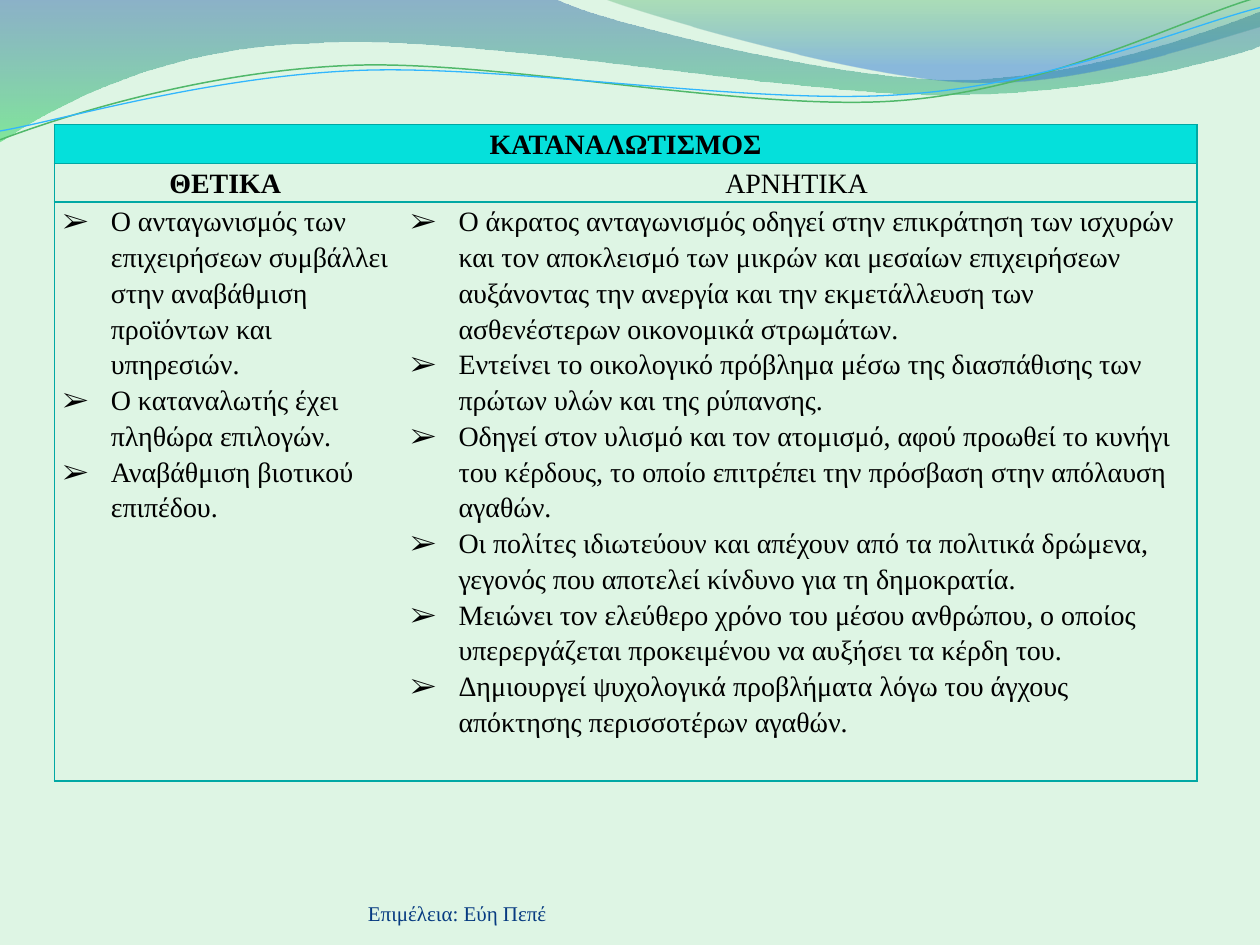
"""Builds a slide with a two-column table on consumerism under a waved header."""
from dataclasses import dataclass
from typing import Optional

from lxml import etree
from pptx import Presentation
from pptx import util as u
from pptx.dml.color import RGBColor
from pptx.enum import text
from pptx.oxml.ns import qn

Point = tuple[float, float]


@dataclass(frozen=True)
class Theme:
    background: str = "DEF5E4"
    header: str = "05E0DB"
    border: str = "01A8A4"
    ink: str = "000000"
    credit: str = "073B81"
    font: str = "Times New Roman"
    table_size: float = 16
    credit_size: float = 12
    border_width: float = 0.75
    line_spacing: float = 1.15


@dataclass(frozen=True)
class Stop:
    position: float
    color: str
    opacity: int


@dataclass(frozen=True)
class Wave:
    """A start point and segments of one point (straight) or three (Bezier)."""
    start: Point
    segments: list[tuple[Point, ...]]
    stops: tuple[Stop, ...] = ()
    line: Optional[str] = None
    width: float = 0


THEME = Theme()
WAVES = [
    Wave((0, 0), [
        ((4.4, -0.01),),
        ((4.76, 0.17), (6.64, 0.63), (7.58, 0.63)),
        ((8.53, 0.63), (9.58, 0.26), (10, 0.09)),
        ((10.01, 0.36),),
        ((9.83, 0.44), (8.7, 0.76), (7.46, 0.75)),
        ((6.22, 0.75), (3.82, 0.28), (2.57, 0.34)),
        ((1.29, 0.36), (0.46, 0.83), (-0.01, 1.13)),
    ], stops=(Stop(0, "2960A7", 45), Stop(1, "35DA5E", 55))),
    Wave((4.79, -0.01), [
        ((5.09, 0.11), (6.82, 0.62), (7.69, 0.65)),
        ((8.56, 0.69), (9.61, 0.32), (10, 0.21)),
        ((10, 0),),
    ], stops=(Stop(0, "36A752", 30), Stop(0.8, "2472D3", 45))),
    Wave((0, 1.11), [
        ((0.48, 0.93), (1.58, 0.57), (2.77, 0.52)),
        ((3.95, 0.47), (5.93, 0.89), (7.13, 0.8)),
        ((8.33, 0.71), (9.38, 0.15), (9.98, -0.02)),
    ], line="50B86A", width=0.85),
    Wave((0, 1.04), [
        ((0.47, 0.96), (1.64, 0.61), (2.83, 0.56)),
        ((4.03, 0.51), (5.97, 0.84), (7.17, 0.75)),
        ((8.36, 0.67), (9.41, 0.21), (10, 0.06)),
    ], line="31B6FD", width=0.75),
]
TITLE = "ΚΑΤΑΝΑΛΩΤΙΣΜΟΣ"
HEADINGS = ["ΘΕΤΙΚΑ ", "ΑΡΝΗΤΙΚΑ "]
POSITIVES = [
    "Ο ανταγωνισμός των επιχειρήσεων συμβάλλει στην αναβάθμιση προϊόντων και υπηρεσιών.",
    "Ο καταναλωτής έχει πληθώρα επιλογών.",
    "Αναβάθμιση βιοτικού επιπέδου.",
]
NEGATIVES = [
    "Ο άκρατος ανταγωνισμός οδηγεί στην επικράτηση των ισχυρών και τον αποκλεισμό των μικρών "
    "και μεσαίων επιχειρήσεων αυξάνοντας την ανεργία και την εκμετάλλευση των ασθενέστερων "
    "οικονομικά στρωμάτων.",
    "Εντείνει το οικολογικό πρόβλημα μέσω της διασπάθισης των πρώτων υλών και της ρύπανσης.",
    "Οδηγεί στον υλισμό και τον ατομισμό, αφού προωθεί το κυνήγι του κέρδους, το οποίο "
    "επιτρέπει την πρόσβαση στην απόλαυση αγαθών.",
    "Οι πολίτες ιδιωτεύουν και απέχουν από τα πολιτικά δρώμενα, γεγονός που αποτελεί κίνδυνο "
    "για τη δημοκρατία.",
    "Μειώνει τον ελεύθερο χρόνο του μέσου ανθρώπου, ο οποίος υπερεργάζεται προκειμένου να "
    "αυξήσει τα κέρδη του.",
    "Δημιουργεί ψυχολογικά προβλήματα λόγω του άγχους απόκτησης περισσοτέρων αγαθών.",
]


def rgb(value: str) -> RGBColor:
    return RGBColor.from_string(value)


def to_emu(point: Point) -> tuple[int, int]:
    return u.Inches(point[0]), u.Inches(point[1])


def bend(shape, wave: Wave) -> None:
    """Turn the straight steps of three-point segments into Bezier curves."""
    steps = list(shape._element.spPr.iter(qn("a:lnTo")))
    for step, segment in zip(steps, wave.segments):
        if len(segment) == 3:
            curve = etree.Element(qn("a:cubicBezTo"))
            for x, y in map(to_emu, segment):
                etree.SubElement(curve, qn("a:pt"), x=str(x - shape.left), y=str(y - shape.top))
            step.getparent().replace(step, curve)


def draw_wave(page, wave: Wave) -> None:
    builder = page.shapes.build_freeform(*to_emu(wave.start))
    builder.add_line_segments([to_emu(segment[-1]) for segment in wave.segments],
                              close=bool(wave.stops))
    shape = builder.convert_to_shape()
    bend(shape, wave)
    shape.shadow.inherit = False
    if wave.line:
        shape.fill.background()
        shape.line.color.rgb = rgb(wave.line)
        shape.line.width = u.Pt(wave.width)
        return
    shape.line.fill.background()
    shape.fill.gradient()
    shape.fill.gradient_angle = 270
    for target, stop in zip(shape.fill.gradient_stops, wave.stops):
        target.position = stop.position
        target.color.rgb = rgb(stop.color)
    for color, stop in zip(shape._element.spPr.iter(qn("a:srgbClr")), wave.stops):
        etree.SubElement(color, qn("a:alpha"), val=str(stop.opacity * 1000))


def style_spans(paragraph, size: float, color: str, bold: bool = False) -> None:
    for span in paragraph.runs:
        font = span.font
        font.name, font.size, font.bold = THEME.font, u.Pt(size), bold
        font.color.rgb = rgb(color)


def add_bullet(paragraph) -> None:
    properties = paragraph._p.get_or_add_pPr()
    properties.set("marL", str(u.Inches(0.38)))
    properties.set("indent", str(u.Inches(-0.38)))
    etree.SubElement(properties, qn("a:buFont"), typeface=THEME.font)
    etree.SubElement(properties, qn("a:buChar"), char="➢")


def set_borders(cell, visible: str) -> None:
    properties = cell._tc.get_or_add_tcPr()
    for index, side in enumerate("LRTB"):
        line = etree.Element(qn(f"a:ln{side}"), w=str(u.Pt(THEME.border_width)))
        if side in visible:
            fill = etree.SubElement(line, qn("a:solidFill"))
            etree.SubElement(fill, qn("a:srgbClr"), val=THEME.border)
        else:
            etree.SubElement(line, qn("a:noFill"))
        properties.insert(index, line)


def fill_cell(cell, lines: list[str], borders: str, bold: bool = False,
              bullets: bool = False, color: Optional[str] = None) -> None:
    cell.margin_left = cell.margin_right = u.Inches(0.07)
    cell.margin_top = cell.margin_bottom = 0
    if color:
        cell.fill.solid()
        cell.fill.fore_color.rgb = rgb(color)
    else:
        cell.fill.background()
    set_borders(cell, borders)
    cell.text = "\n".join(lines)
    for paragraph in cell.text_frame.paragraphs:
        paragraph.line_spacing = THEME.line_spacing
        style_spans(paragraph, THEME.table_size, THEME.ink, bold)
        if bullets:
            add_bullet(paragraph)
        else:
            paragraph.alignment = text.PP_ALIGN.CENTER


def draw_table(page) -> None:
    widths, heights = (2.76, 6.31), (0.3, 0.3, 4.42)
    table = page.shapes.add_table(3, 2, u.Inches(0.43), u.Inches(0.99),
                                  u.Inches(sum(widths)), u.Inches(sum(heights))).table
    table.first_row = table.horz_banding = False
    for column, width in zip(table.columns, widths):
        column.width = u.Inches(width)
    for row, height in zip(table.rows, heights):
        row.height = u.Inches(height)
    table.cell(0, 0).merge(table.cell(0, 1))
    fill_cell(table.cell(0, 0), [TITLE], "LRTB", bold=True, color=THEME.header)
    for column, (side, items) in enumerate((("L", POSITIVES), ("R", NEGATIVES))):
        fill_cell(table.cell(1, column), [HEADINGS[column]], side + "TB", bold=column == 0)
        fill_cell(table.cell(2, column), items, side + "TB", bullets=True)


def draw_credit(page) -> None:
    box = page.shapes.add_textbox(u.Inches(2.92), u.Inches(6.95), u.Inches(3.67), u.Inches(0.4))
    frame = box.text_frame
    frame.word_wrap = True
    frame.vertical_anchor = text.MSO_ANCHOR.BOTTOM
    frame.margin_left = frame.margin_top = frame.margin_right = frame.margin_bottom = 0
    frame.text = "Επιμέλεια: Εύη Πεπέ"
    style_spans(frame.paragraphs[0], THEME.credit_size, THEME.credit)


def main() -> None:
    deck = Presentation()
    deck.slide_width, deck.slide_height = u.Inches(10), u.Inches(7.5)
    page = deck.slides.add_slide(deck.slide_layouts[6])
    page.background.fill.solid()
    page.background.fill.fore_color.rgb = rgb(THEME.background)
    for wave in WAVES:
        draw_wave(page, wave)
    draw_credit(page)
    draw_table(page)
    deck.save("out.pptx")


if __name__ == "__main__":
    main()
